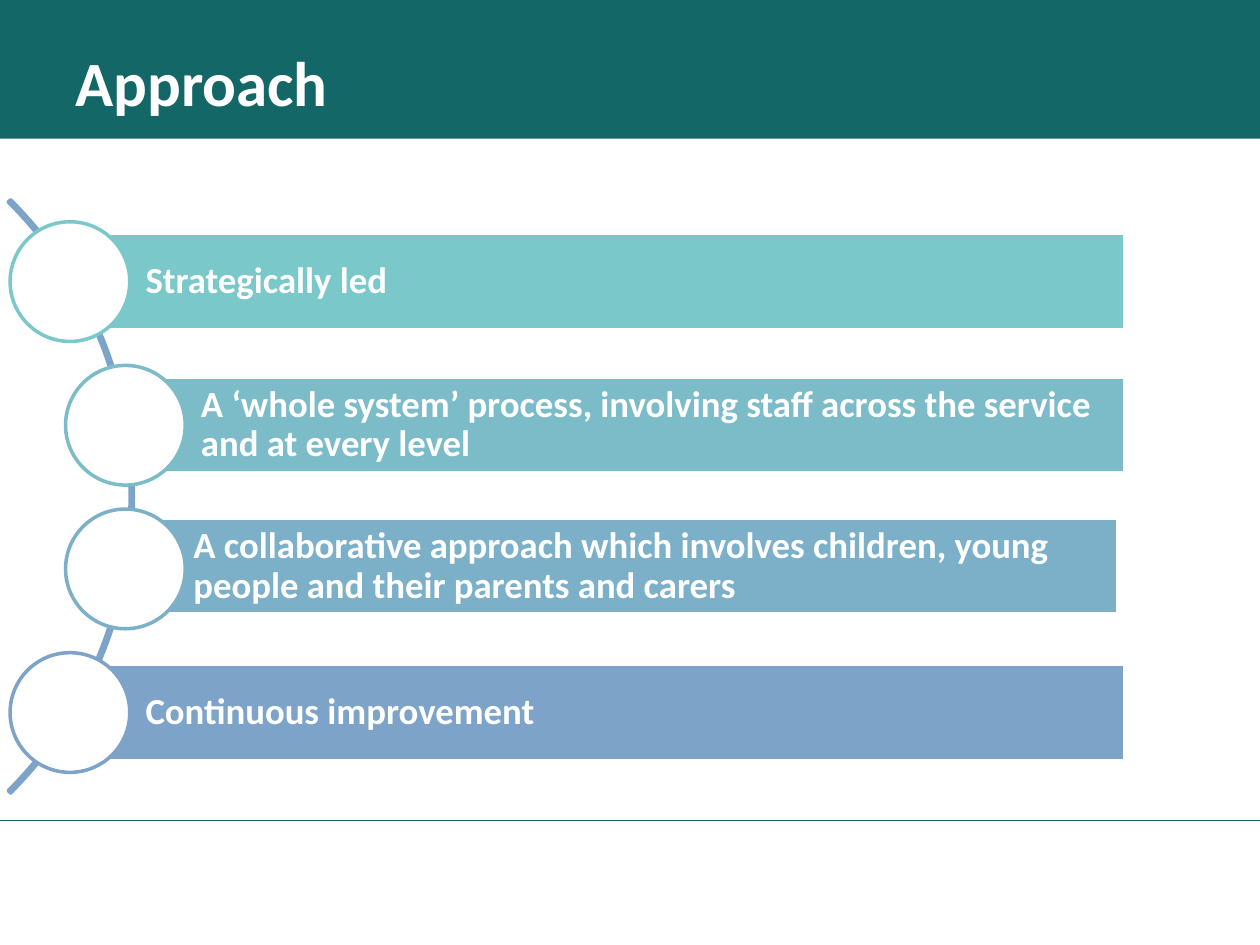
from pptx import Presentation
from pptx.dml.color import RGBColor
from pptx.enum.shapes import MSO_CONNECTOR as Connector, MSO_SHAPE as Shape
from pptx.enum.text import MSO_ANCHOR as Anchor, PP_ALIGN as Align
from pptx.oxml.ns import qn
from pptx.util import Inches, Pt
from lxml.etree import SubElement

WHITE = RGBColor(0xFF, 0xFF, 0xFF)
TEAL = RGBColor(0x14, 0x67, 0x67)
AQUA = RGBColor(0x7B, 0xC8, 0xCA)
LAGOON = RGBColor(0x7C, 0xBC, 0xC9)
SKY = RGBColor(0x7C, 0xB0, 0xC9)
BLUE = RGBColor(0x7D, 0xA4, 0xC8)


def write(box, text, size, insets=(0.1, 0.05, 0.1, 0.05), spacing=1.0):
    frame = box.text_frame
    frame.word_wrap = True
    frame.vertical_anchor = Anchor.MIDDLE
    frame.margin_left, frame.margin_top, frame.margin_right, frame.margin_bottom = map(Inches, insets)
    para = frame.paragraphs[0]
    para.alignment = Align.LEFT
    para.line_spacing = spacing
    span = para.add_run()
    span.text = text
    span.font.name = "Calibri"
    span.font.size = Pt(size)
    span.font.bold = True
    span.font.color.rgb = WHITE


def draw(kind, left, top, width, height, fill=None, line=None):
    shape = page.shapes.add_shape(kind, Inches(left), Inches(top), Inches(width), Inches(height))
    shape.shadow.inherit = False
    if fill is None:
        shape.fill.background()
    else:
        shape.fill.solid()
        shape.fill.fore_color.rgb = fill
    if line is None:
        shape.line.fill.background()
    else:
        shape.line.color.rgb = line
        shape.line.width = Pt(2)
    return shape


deck = Presentation()
deck.slide_width = Inches(10)
deck.slide_height = Inches(7.5)
page = deck.slides.add_slide(deck.slide_layouts[6])

draw(Shape.RECTANGLE, 0, 0, 10, 1.1, fill=TEAL)

rule = page.shapes.add_connector(Connector.STRAIGHT, Inches(10), Inches(6.51), Inches(0), Inches(6.51))
rule.line.color.rgb = TEAL
rule.line.width = Pt(0.75)
SubElement(rule._element.spPr, qn("a:effectLst"))

arc = draw(Shape.BLOCK_ARC, -5.6, 0.61, 6.66, 6.66, line=BLUE)
for index, value in enumerate((189, 27, 0.004)):
    arc.adjustments[index] = value

steps = [
    ("Strategically led", AQUA, 0.08, 0, 0),
    ("A ‘whole system’ process, involving staff across the service and at every level", LAGOON, 0.52, 0, 0),
    ("A collaborative approach which involves children, young people and their parents and carers",
     SKY, 0.52, -0.06, -0.02),
    ("Continuous improvement", BLUE, 0.08, 0, 0),
]
circle_size = 0.95
bar_height = 0.76
bar_right = 8.93
for index, (text, color, circle_left, shift_x, shift_y) in enumerate(steps):
    circle_top = 1.76 + 1.14 * index
    bar_left = circle_left + circle_size / 2
    bar_top = circle_top + (circle_size - bar_height) / 2
    bar = draw(Shape.RECTANGLE, bar_left + shift_x, bar_top + shift_y,
               bar_right - bar_left, bar_height, fill=color, line=WHITE)
    write(bar, text, 21, insets=(0.6, 0.06, 0.06, 0.06), spacing=0.9)
    draw(Shape.OVAL, circle_left, circle_top, circle_size, circle_size, fill=WHITE, line=color)

title = page.shapes.add_textbox(Inches(0.5), Inches(0.3), Inches(9), Inches(0.69))
write(title, "Approach", 36)

deck.save("out.pptx")
